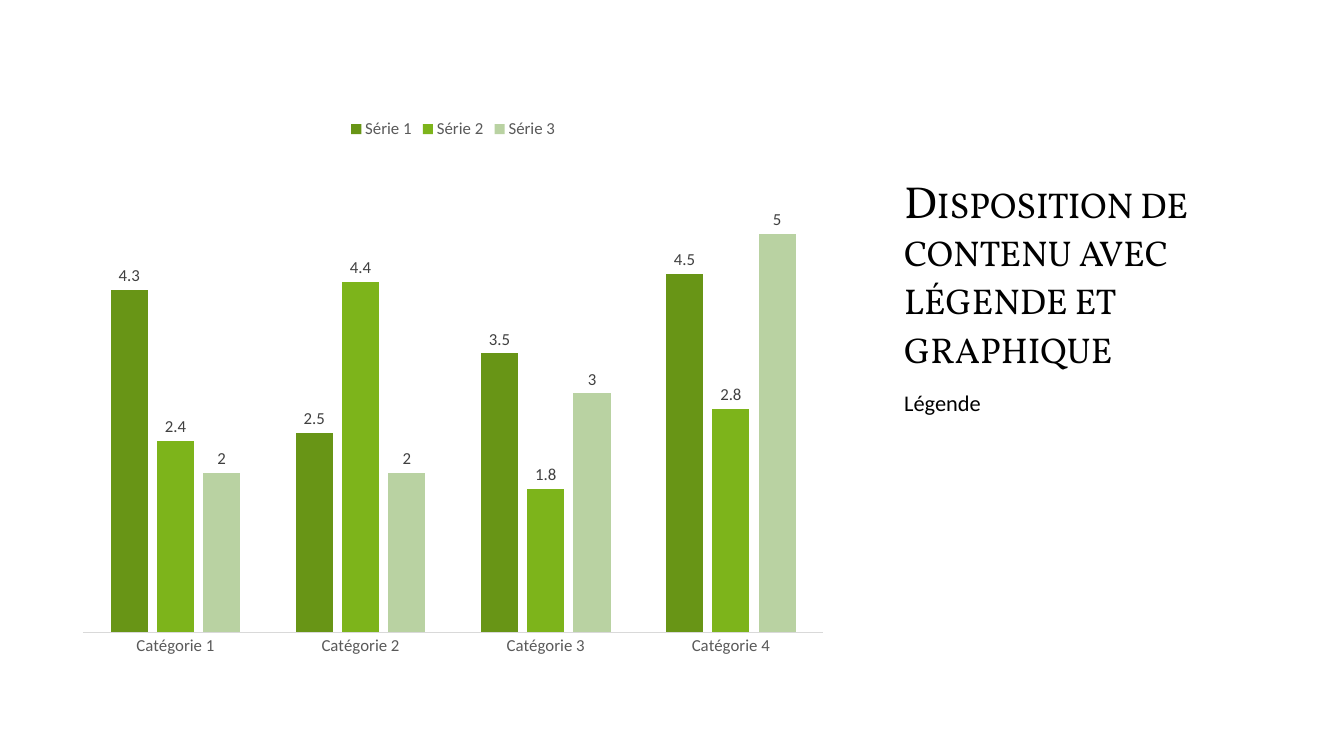
import pptx
import pptx.chart.data
import pptx.dml.color
import pptx.enum.chart
import pptx.enum.text
import pptx.util
from pptx.util import Inches

Pt = pptx.util.Pt


def style_font(font, size, color, name="Calibri"):
    font.size = Pt(size)
    font.name = name
    font.color.rgb = pptx.dml.color.RGBColor.from_string(color)


def add_text(slide, text, top, height, anchor, size, font_name):
    """Add a text box in the right-hand column and return its paragraph."""
    frame = slide.shapes.add_textbox(
        Inches(8.87), Inches(top), Inches(3.8), Inches(height)).text_frame
    frame.word_wrap = True
    frame.vertical_anchor = anchor
    paragraph = frame.paragraphs[0]
    paragraph.text = text
    paragraph.line_spacing = 0.9
    style_font(paragraph.font, size, "000000", font_name)
    return paragraph


presentation = pptx.Presentation()
presentation.slide_width = Inches(13.33)
presentation.slide_height = Inches(7.5)
slide = presentation.slides.add_slide(presentation.slide_layouts[6])

# Title and caption
title = add_text(slide, "Disposition de contenu avec légende et graphique",
                 1.25, 2.5, pptx.enum.text.MSO_ANCHOR.BOTTOM, 32, "Vollkorn")
title.runs[0]._r.get_or_add_rPr().set("cap", "small")
add_text(slide, "Légende", 3.84, 2.3, pptx.enum.text.MSO_ANCHOR.TOP, 16, "Calibri")

# Column chart
series_rows = [
    ("Série 1", (4.3, 2.5, 3.5, 4.5), "689516"),
    ("Série 2", (2.4, 4.4, 1.8, 2.8), "7DB41B"),
    ("Série 3", (2, 2, 3, 5), "B9D2A2"),
]
chart_data = pptx.chart.data.CategoryChartData()
chart_data.categories = [f"Catégorie {number}" for number in range(1, 5)]
for name, values, color in series_rows:
    chart_data.add_series(name, values)

chart = slide.shapes.add_chart(
    pptx.enum.chart.XL_CHART_TYPE.COLUMN_CLUSTERED,
    Inches(0.67), Inches(1.07), Inches(7.65), Inches(5.55), chart_data).chart
style_font(chart.font, 10, "000000")
chart.has_title = False
chart.has_legend = True
chart.legend.position = pptx.enum.chart.XL_LEGEND_POSITION.TOP
chart.legend.include_in_layout = False
style_font(chart.legend.font, 12, "595959")

category_axis = chart.category_axis
category_axis.major_tick_mark = pptx.enum.chart.XL_TICK_MARK.NONE
category_axis.format.line.width = Pt(0.75)
category_axis.format.line.color.rgb = pptx.dml.color.RGBColor.from_string("D9D9D9")
style_font(category_axis.tick_labels.font, 12, "595959")

value_axis = chart.value_axis
value_axis.minimum_scale = 0
value_axis.maximum_scale = 6
value_axis.has_major_gridlines = False
value_axis.visible = False

plot = chart.plots[0]
plot.gap_width = 150
plot.overlap = -25
plot.vary_by_categories = False
for series, (name, values, color) in zip(plot.series, series_rows):
    series.format.fill.solid()
    series.format.fill.fore_color.rgb = pptx.dml.color.RGBColor.from_string(color)
    labels = series.data_labels
    labels.show_value = True
    labels.position = pptx.enum.chart.XL_LABEL_POSITION.OUTSIDE_END
    style_font(labels.font, 12, "404040")

presentation.save("out.pptx")
